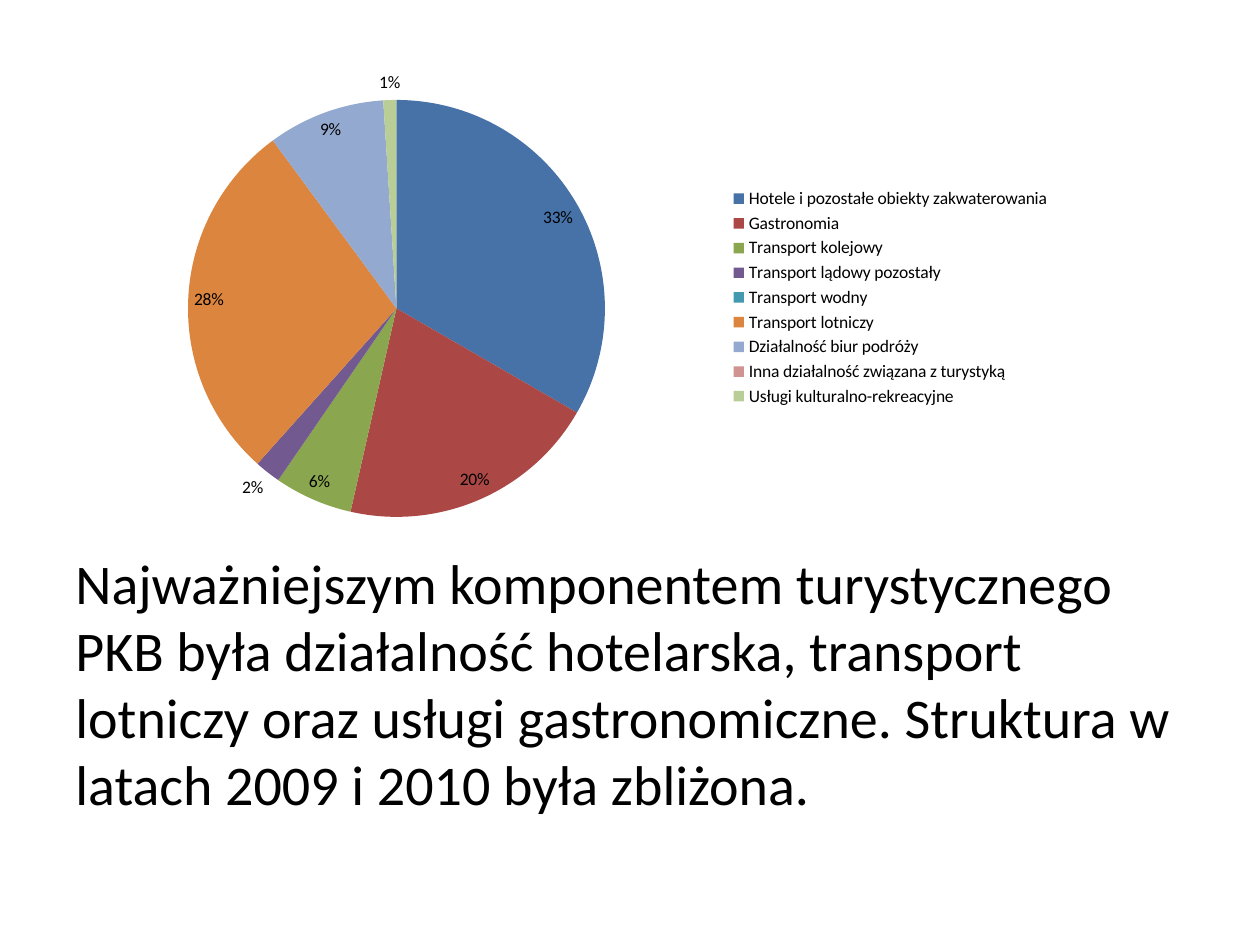
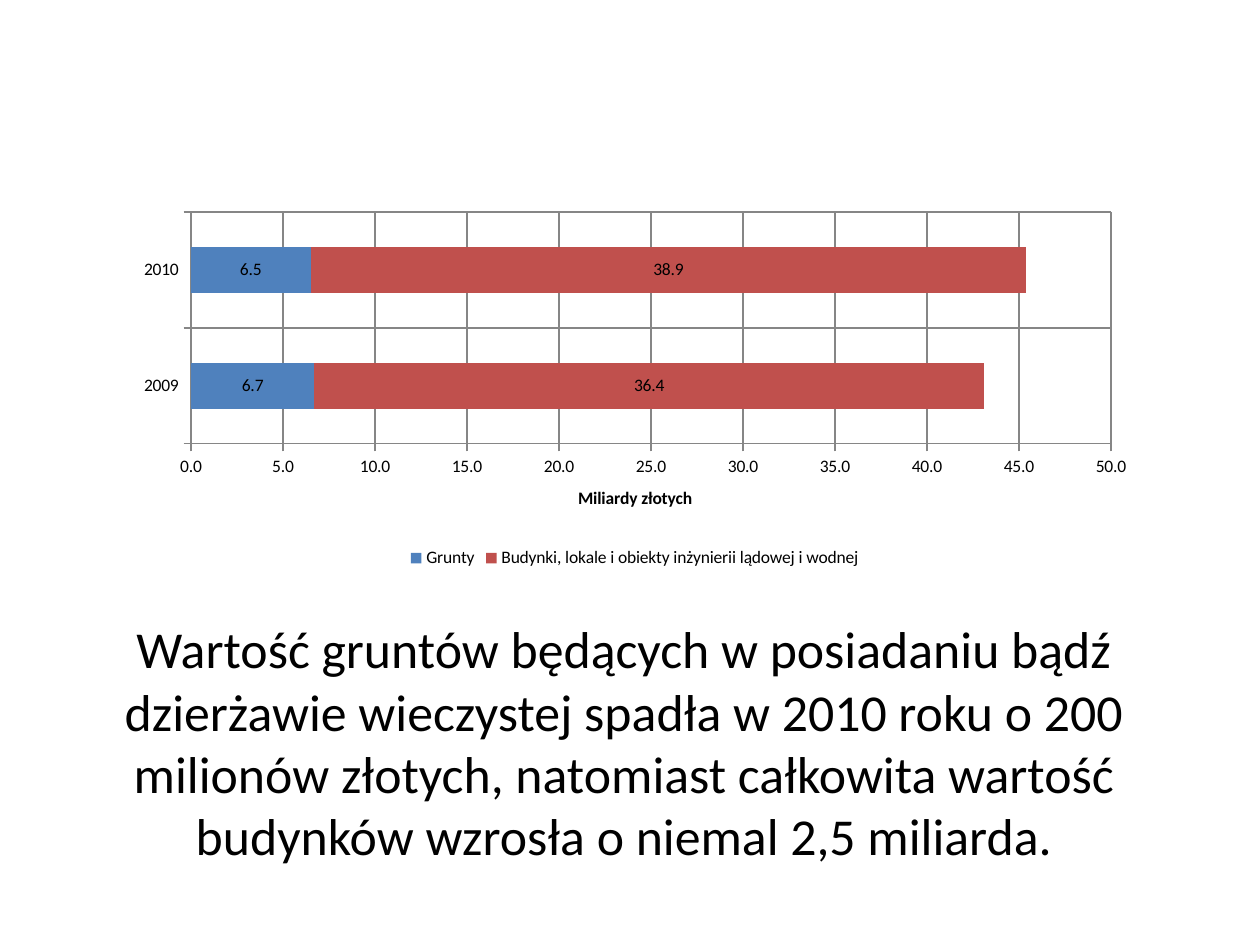
import pptx
import pptx.chart.data
import pptx.dml.color
import pptx.enum.chart
import pptx.enum.text
import pptx.oxml
import pptx.oxml.ns
import pptx.util

RGB = pptx.dml.color.RGBColor
CHART = pptx.enum.chart.XL_CHART_TYPE
LEGEND = pptx.enum.chart.XL_LEGEND_POSITION
LABEL = pptx.enum.chart.XL_LABEL_POSITION
ALIGN = pptx.enum.text.PP_ALIGN

FONT = "Calibri"
BLACK = RGB(0x00, 0x00, 0x00)
GRID = RGB(0x86, 0x86, 0x86)
BLUE = RGB(0x4F, 0x81, 0xBD)
RED = RGB(0xC0, 0x50, 0x4D)
SLICE_COLORS = [
    RGB(0x46, 0x72, 0xA8), RGB(0xAB, 0x47, 0x44), RGB(0x8A, 0xA6, 0x4F),
    RGB(0x72, 0x59, 0x90), RGB(0x42, 0x99, 0xB0), RGB(0xDC, 0x85, 0x3E),
    RGB(0x93, 0xA9, 0xCF), RGB(0xD1, 0x93, 0x92), RGB(0xB9, 0xCD, 0x96),
]
PX = 914400 / 126


def add_body(slide, box, text, size, align):
    sp = slide.shapes.add_textbox(*[round(v * PX) for v in box])
    tf = sp.text_frame
    tf.word_wrap = True
    p = tf.paragraphs[0]
    p.text = text
    p.alignment = align
    font = p.runs[0].font
    font.name, font.size = FONT, pptx.util.Pt(size)
    font.color.rgb = BLACK


def add_chart(slide, kind, box, data, legend_at, plot_box):
    """Add a chart whose inner plot area sits at plot_box, in slide px."""
    chart = slide.shapes.add_chart(kind, *[round(v * PX) for v in box], data).chart
    chart.has_title = False
    chart.font.name, chart.font.size = FONT, pptx.util.Pt(10)
    chart.font.color.rgb = BLACK
    chart.has_legend = True
    chart.legend.position = legend_at
    chart.legend.include_in_layout = False
    chart.plots[0].vary_by_categories = kind == CHART.PIE

    left, top, width, height = box
    x, y, w, h = plot_box
    parts = [("layoutTarget", "inner"), ("xMode", "edge"), ("yMode", "edge"),
             ("x", (x - left) / width), ("y", (y - top) / height),
             ("w", w / width), ("h", h / height)]
    marks = "".join(f'<c:{tag} val="{val}"/>' for tag, val in parts)
    layout = pptx.oxml.parse_xml(
        f'<c:layout {pptx.oxml.ns.nsdecls("c")}>'
        f'<c:manualLayout>{marks}</c:manualLayout></c:layout>')
    area = chart.plots[0]._element.getparent()
    for old in area.findall(pptx.oxml.ns.qn("c:layout")):
        area.remove(old)
    area.insert(0, layout)
    return chart


prs = pptx.Presentation()
prs.slide_width, prs.slide_height = round(1260 * PX), round(945 * PX)
blank = prs.slide_layouts[6]

# Slide 1: components of tourism GDP
s = prs.slides.add_slide(blank)
add_body(s, (63, 542, 1143, 302),
         "Najważniejszym komponentem turystycznego PKB była działalność "
         "hotelarska, transport lotniczy oraz usługi gastronomiczne. "
         "Struktura w latach 2009 i 2010 była zbliżona.", 32, ALIGN.LEFT)

components = {
    "Hotele i pozostałe obiekty zakwaterowania": 33,
    "Gastronomia": 20,
    "Transport kolejowy": 6,
    "Transport lądowy pozostały": 2,
    "Transport wodny": 0,
    "Transport lotniczy": 28,
    "Działalność biur podróży": 9,
    "Inna działalność związana z turystyką": 0,
    "Usługi kulturalno-rekreacyjne": 1,
}
data = pptx.chart.data.CategoryChartData()
data.categories = list(components)
data.add_series("Series 1", list(components.values()))
pie = add_chart(s, CHART.PIE, (64, 55, 999, 485), data, LEGEND.RIGHT,
                (188, 100, 417, 417))
for i, color in enumerate(SLICE_COLORS):
    fill = pie.plots[0].series[0].points[i].format.fill
    fill.solid()
    fill.fore_color.rgb = color
pie.plots[0].has_data_labels = True
labels = pie.plots[0].data_labels
labels.show_percentage, labels.show_value = True, False
labels.number_format, labels.number_format_is_linked = "0%", False
labels.position = LABEL.BEST_FIT

# Slide 2: value of land and buildings
s = prs.slides.add_slide(blank)
add_body(s, (63, 611, 1123, 233),
         "Wartość gruntów będących w posiadaniu bądź dzierżawie wieczystej "
         "spadła w 2010 roku o 200 milionów złotych, natomiast całkowita "
         "wartość budynków wzrosła o niemal 2,5 miliarda.", 29.6, ALIGN.CENTER)

data = pptx.chart.data.CategoryChartData(number_format="0.0")
data.categories = ["2009", "2010"]
data.add_series("Grunty", [6.7, 6.5])
data.add_series("Budynki, lokale i obiekty inżynierii lądowej i wodnej", [36.4, 38.9])
bars = add_chart(s, CHART.BAR_STACKED, (123, 204, 1023, 369), data, LEGEND.BOTTOM,
                 (191, 212, 920, 232))
plot = bars.plots[0]
plot.gap_width, plot.overlap = 150, 100
for series, color in zip(plot.series, (BLUE, RED)):
    series.format.fill.solid()
    series.format.fill.fore_color.rgb = color
plot.has_data_labels = True
plot.data_labels.show_value = True
plot.data_labels.number_format = "0.0"
plot.data_labels.number_format_is_linked = False

for axis in (bars.category_axis, bars.value_axis):
    axis.has_major_gridlines = True
    axis.major_tick_mark = pptx.enum.chart.XL_TICK_MARK.OUTSIDE
    for line in (axis.format.line, axis.major_gridlines.format.line):
        line.color.rgb = GRID
        line.width = pptx.util.Pt(0.75)
axis = bars.value_axis
axis.minimum_scale, axis.maximum_scale, axis.major_unit = 0, 50, 5
axis.tick_labels.number_format = "0.0"
axis.tick_labels.number_format_is_linked = False
tf = axis.axis_title.text_frame
tf.text = "Miliardy złotych"
font = tf.paragraphs[0].runs[0].font
font.name, font.size, font.bold = FONT, pptx.util.Pt(10), True
font.color.rgb = BLACK

prs.save("out.pptx")
